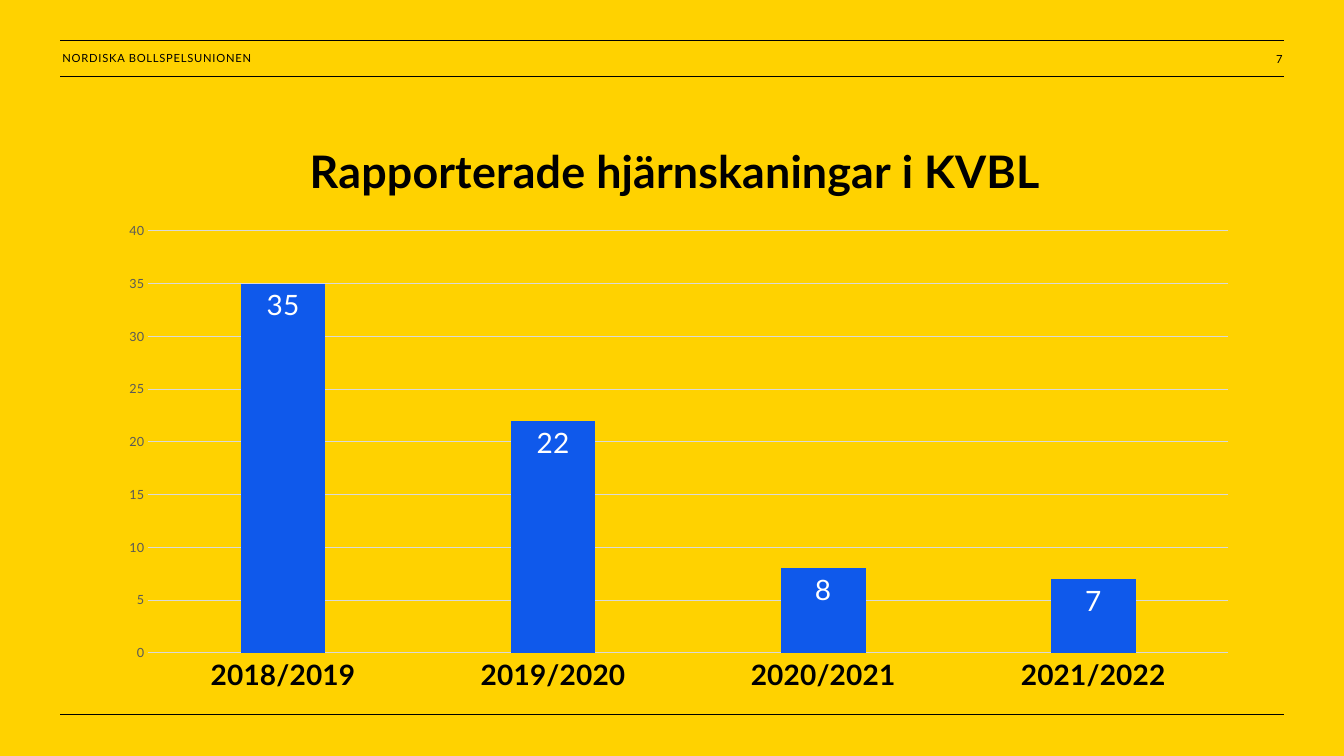
from lxml.etree import SubElement
from pptx import Presentation
from pptx.chart.data import CategoryChartData
from pptx.dml.color import RGBColor
from pptx.enum.chart import XL_CHART_TYPE, XL_LABEL_POSITION, XL_TICK_MARK
from pptx.enum.shapes import MSO_CONNECTOR
from pptx.enum.text import MSO_ANCHOR, PP_ALIGN
from pptx.oxml.ns import qn
from pptx.util import Inches, Pt


def rgb(value):
    return RGBColor.from_string(value)


class ScanSlide:
    font_name = "Lato"
    ink = "000000"
    background = "FFD200"
    bar = "0F59EB"
    bar_label = "FFFFFF"
    grid = "D9D9D9"
    scale = "595959"

    def __init__(self, presentation):
        self.slide = presentation.slides.add_slide(presentation.slide_layouts[6])
        fill = self.slide.background.fill
        fill.solid()
        fill.fore_color.rgb = rgb(self.background)

    def style(self, font, size, color, bold=False):
        font.name = self.font_name
        font.size = Pt(size)
        font.bold = bold
        font.color.rgb = rgb(color)

    def rule(self, y):
        line = self.slide.shapes.add_connector(
            MSO_CONNECTOR.STRAIGHT, Inches(0.6), Inches(y), Inches(12.73), Inches(y))
        line.line.color.rgb = rgb(self.ink)
        line.line.width = Pt(1)
        SubElement(line._element.spPr, qn("a:effectLst"))

    def header(self, text, left, top, width, height, align=PP_ALIGN.LEFT, inset_top=0):
        box = self.slide.shapes.add_textbox(
            Inches(left), Inches(top), Inches(width), Inches(height))
        frame = box.text_frame
        frame.word_wrap = True
        frame.vertical_anchor = MSO_ANCHOR.MIDDLE
        frame.margin_left = frame.margin_right = frame.margin_bottom = 0
        frame.margin_top = Inches(inset_top)
        frame.text = text
        paragraph = frame.paragraphs[0]
        paragraph.alignment = align
        run = paragraph.runs[0]
        self.style(run.font, 8, self.ink)
        run.font._element.set("spc", "50")

    def place(self, parent, index, **settings):
        for old in parent.findall(qn("c:layout")):
            parent.remove(old)
        layout = SubElement(parent, qn("c:layout"))
        manual = SubElement(layout, qn("c:manualLayout"))
        for name, value in settings.items():
            SubElement(manual, qn(f"c:{name}")).set("val", str(value))
        parent.insert(index, layout)

    def column_chart(self, title, seasons, scans, left, top, width, height):
        data = CategoryChartData()
        data.categories = seasons
        data.add_series("Series 1", scans)
        chart = self.slide.shapes.add_chart(
            XL_CHART_TYPE.COLUMN_CLUSTERED, Inches(left), Inches(top),
            Inches(width), Inches(height), data).chart
        self.style(chart.font, 10, self.ink)
        chart.has_legend = False
        self.chart_title(chart, title)
        self.axes(chart)
        self.columns(chart.plots[0])
        self.place(chart._chartSpace.chart.plotArea, 0, layoutTarget="inner",
                   xMode="edge", yMode="edge", x=0.036, y=0.2, w=0.944, h=0.716)

    def chart_title(self, chart, text):
        chart.has_title = True
        title = chart.chart_title
        title.include_in_layout = False
        title.text_frame.text = text
        self.style(title.text_frame.paragraphs[0].runs[0].font, 32, self.ink, True)
        self.place(title._element, 1, xMode="edge", yMode="edge", x=0.17, y=0.03)

    def axes(self, chart):
        seasons, values = chart.category_axis, chart.value_axis
        for axis in (seasons, values):
            axis.major_tick_mark = axis.minor_tick_mark = XL_TICK_MARK.NONE
        self.style(seasons.tick_labels.font, 20, self.ink, True)
        self.style(values.tick_labels.font, 9, self.scale)
        values.minimum_scale, values.maximum_scale, values.major_unit = 0, 40, 5
        values.has_major_gridlines = True
        values.format.line.fill.background()
        for line in (seasons.format.line, values.major_gridlines.format.line):
            line.color.rgb = rgb(self.grid)
            line.width = Pt(0.75)

    def columns(self, plot):
        plot.gap_width = 219
        plot.overlap = -27
        plot.vary_by_categories = False
        fill = plot.series[0].format.fill
        fill.solid()
        fill.fore_color.rgb = rgb(self.bar)
        labels = plot.series[0].data_labels
        labels.show_value = True
        labels.position = XL_LABEL_POSITION.INSIDE_END
        self.style(labels.font, 20, self.bar_label)


def main():
    presentation = Presentation()
    presentation.slide_width = Inches(13.33)
    presentation.slide_height = Inches(7.5)
    page = ScanSlide(presentation)
    for y in (0.4, 0.76, 7.09):
        page.rule(y)
    page.header("NORDISKA BOLLSPELSUNIONEN", 0.62, 0.4, 3.36, 0.35)
    page.header("7", 11.83, 0.4, 0.89, 0.34, PP_ALIGN.RIGHT, 0.04)
    page.column_chart(
        "Rapporterade hjärnskaningar i KVBL",
        ("2018/2019", "2019/2020", "2020/2021", "2021/2022"),
        (35, 22, 8, 7), 1.06, 1.12, 11.35, 5.85)
    presentation.save("out.pptx")


if __name__ == "__main__":
    main()
